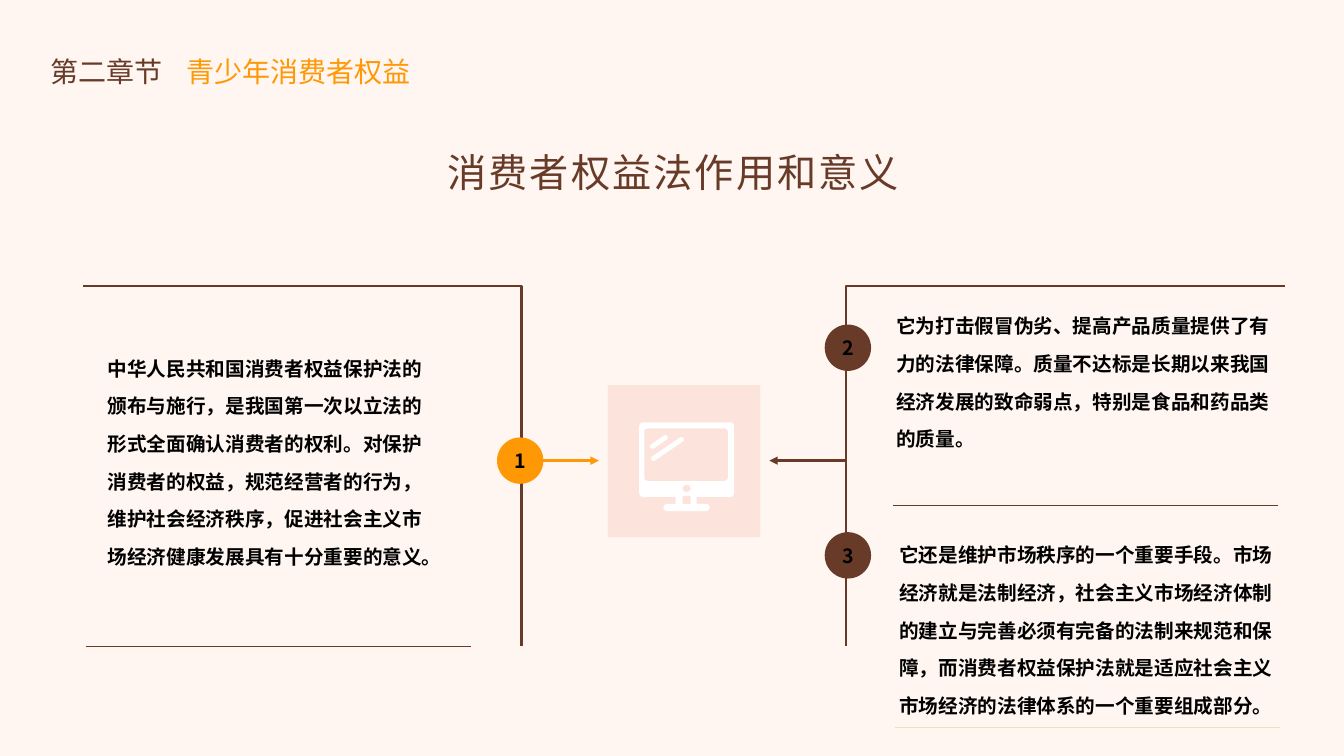
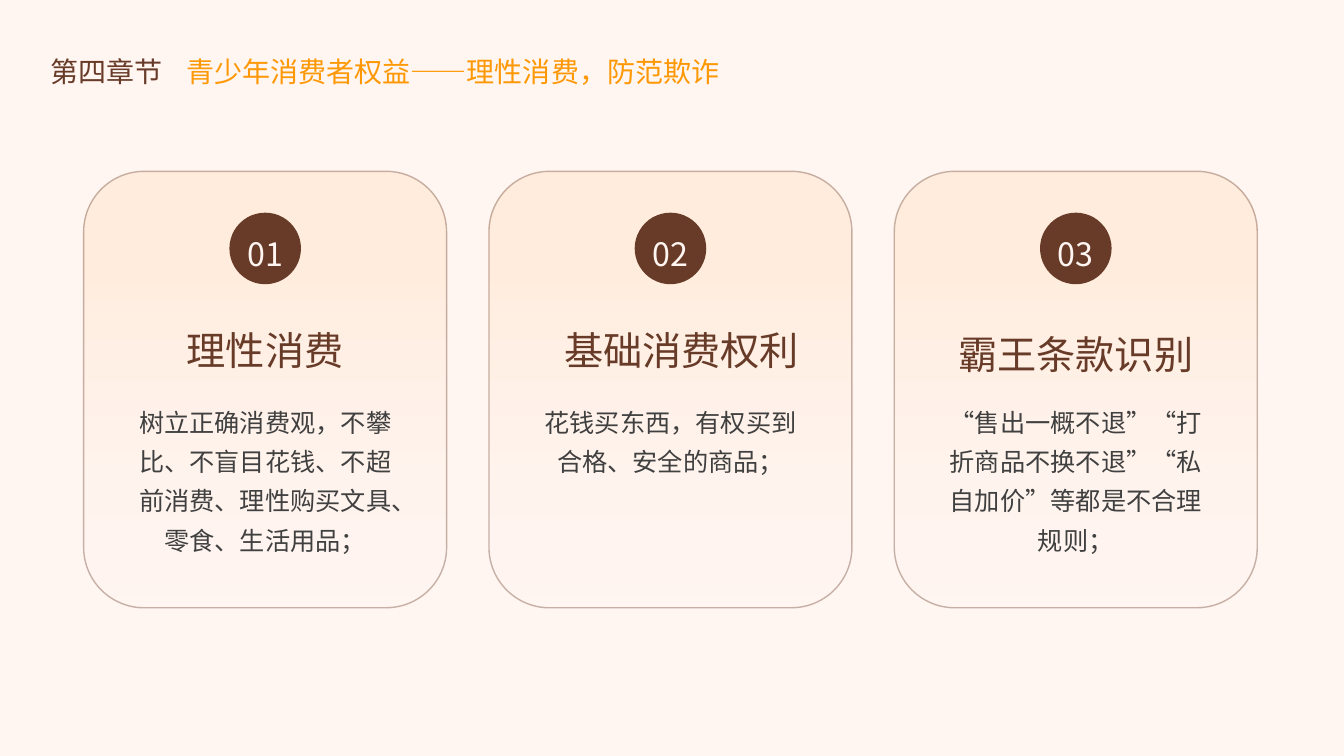
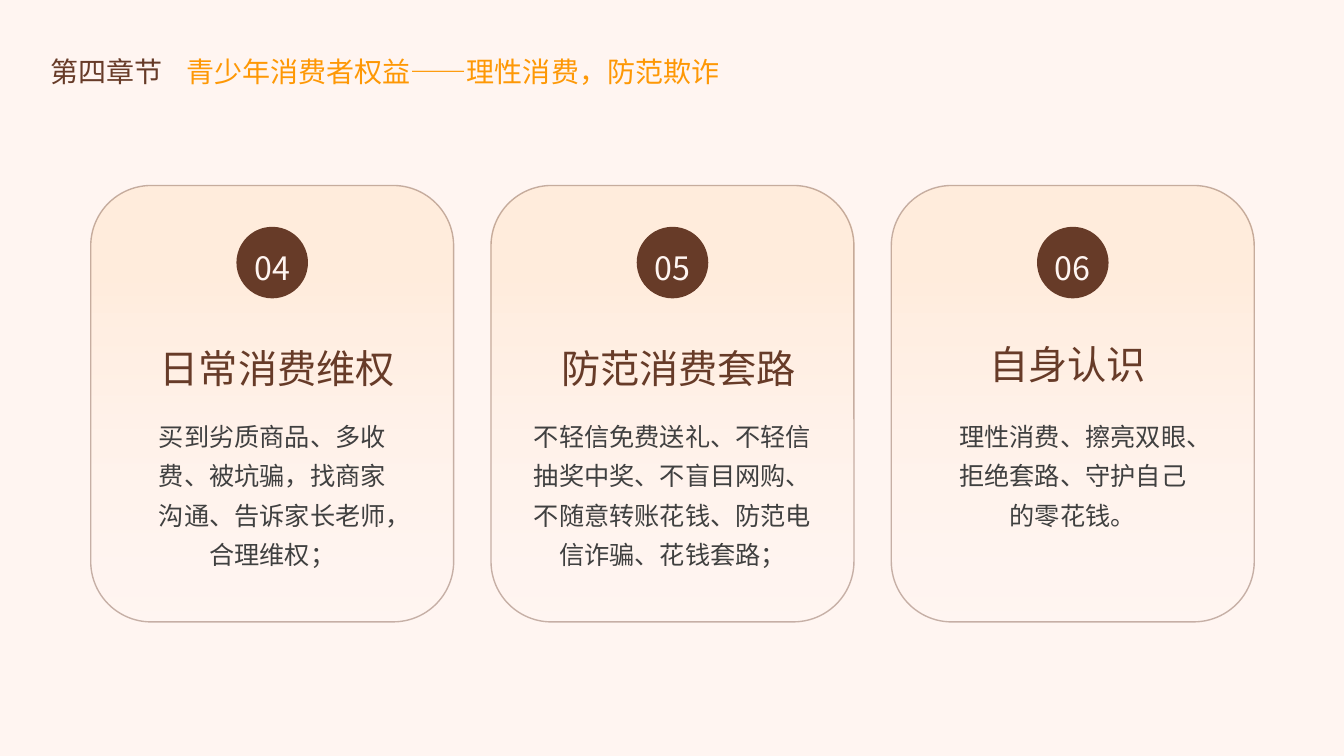
"""Build three slides on the consumer rights of young people."""
from dataclasses import dataclass

from lxml import etree
from pptx import Presentation
from pptx.dml.color import RGBColor
from pptx.enum import shapes, text
from pptx.oxml.ns import qn
from pptx.util import Inches, Pt

FONT = "Noto Sans CJK SC"
BROWN, ORANGE, PINK, CREAM = "673B28", "FE9805", "FCE3DC", "FFF5F1"
WHITE, BLACK, GREY, SAND = "FFFFFF", "000000", "404040", "F0E0B8"
CARD_WIDTH, CARD_HEIGHT = 3.6, 4.33
TITLE_WIDTH, NUMBER_WIDTH, DISC = 2.87, 0.93, 0.71
BADGE = 0.46
Shape = shapes.MSO_SHAPE


@dataclass
class Style:
    size: float
    color: str
    bold: bool = False
    spacing: float = 1.0
    centred: bool = False
    tracking: int = 0


@dataclass
class Card:
    number: str
    title: str
    body: str
    body_width: float = 2.85
    title_shift: float = 0.0
    title_top: float = 1.25


@dataclass
class Point:
    left: float
    top: float
    width: float
    height: float
    body: str


@dataclass
class Badge:
    number: str
    left: float
    top: float
    color: str


@dataclass
class Line:
    start: tuple[float, float]
    end: tuple[float, float]
    color: str
    weight: float = 0.25
    arrow: bool = False
    cap: str = "flat"


@dataclass
class Part:
    kind: Shape
    left: float
    top: float
    width: float
    height: float
    color: str
    corner: float | None = None


CHAPTER = Style(20, BROWN)
TOPIC = Style(20, ORANGE)
HEADLINE = Style(28, BROWN, tracking=150)
POINT = Style(14, BLACK, bold=True, spacing=1.6)
BADGE_NUMBER = Style(14, BLACK, bold=True, centred=True)
CARD_TITLE = Style(28, BROWN, spacing=1.5, centred=True)
CARD_NUMBER = Style(23, CREAM, spacing=1.5, centred=True)
CARD_BODY = Style(18, GREY, spacing=1.3, centred=True)

RULES = [
    Line((5.17, 4.57), (5.94, 4.57), ORANGE, 2, arrow=True),
    Line((8.39, 4.57), (7.63, 4.57), BROWN, 2, arrow=True),
    Line((8.86, 5.01), (12.68, 5.01), BROWN),
    Line((8.88, 7.21), (12.7, 7.21), SAND),
    Line((0.85, 6.41), (4.67, 6.41), BROWN),
]
POINTS = [
    Point(0.97, 3.35, 3.48, 2.55, "中华人民共和国消费者权益保护法的颁布与施行，是我国第一次以立法的形式全面确认消费者的权利。对保护消费者的权益，规范经营者的行为，维护社会经济秩序，促进社会主义市场经济健康发展具有十分重要的意义。"),
    Point(8.79, 2.93, 3.95, 1.51, "它为打击假冒伪劣、提高产品质量提供了有力的法律保障。质量不达标是长期以来我国经济发展的致命弱点，特别是食品和药品类的质量。"),
    Point(8.82, 5.2, 3.95, 0.72, "它还是维护市场秩序的一个重要手段。市场经济就是法制经济，社会主义市场经济体制的建立与完善必须有完备的法制来规范和保障，而消费者权益保护法就是适应社会主义市场经济的法律体系的一个重要组成部分。"),
]
BADGES = [
    Badge("1", 4.93, 4.34, ORANGE),
    Badge("2", 8.18, 3.22, BROWN),
    Badge("3", 8.18, 5.28, BROWN),
]
MONITOR = [
    Part(Shape.RECTANGLE, 6.03, 3.82, 1.51, 1.51, PINK),
    Part(Shape.ROUNDED_RECTANGLE, 6.34, 4.19, 0.94, 0.74, WHITE, 0.05),
    Part(Shape.ROUNDED_RECTANGLE, 6.39, 4.25, 0.83, 0.52, PINK, 0.07),
    Part(Shape.OVAL, 6.77, 4.81, 0.08, 0.07, PINK),
    Part(Shape.RECTANGLE, 6.7, 4.92, 0.21, 0.1, WHITE),
    Part(Shape.ROUNDED_RECTANGLE, 6.77, 4.92, 0.08, 0.08, PINK, 0.15),
    Part(Shape.ROUNDED_RECTANGLE, 6.58, 5.0, 0.46, 0.07, WHITE, 0.5),
]
GLARE = [
    Line((6.48, 4.55), (6.76, 4.36), WHITE, 3.5, cap="rnd"),
    Line((6.47, 4.43), (6.6, 4.34), WHITE, 3.5, cap="rnd"),
]
RIGHTS_CARDS = [
    Card("01", "理性消费", "树立正确消费观，不攀比、不盲目花钱、不超前消费、理性购买文具、零食、生活用品；"),
    Card("02", "基础消费权利", "花钱买东西，有权买到合格、安全的商品；", title_shift=0.11),
    Card("03", "霸王条款识别", "“售出一概不退”“打折商品不换不退”“私自加价”等都是不合理规则；", title_top=1.29),
]
DEFENCE_CARDS = [
    Card("04", "日常消费维权", "买到劣质商品、多收费、被坑骗，找商家沟通、告诉家长老师，合理维权；", 2.69, 0.05, 1.29),
    Card("05", "防范消费套路", "不轻信免费送礼、不轻信抽奖中奖、不盲目网购、不随意转账花钱、防范电信诈骗、花钱套路；", 2.99, 0.06, 1.29),
    Card("06", "自身认识", "理性消费、擦亮双眼、拒绝套路、守护自己的零花钱。", 2.69, -0.05),
]


def rgb(color: str) -> RGBColor:
    return RGBColor.from_string(color)


def write(frame, content: str, style: Style) -> None:
    paragraph = frame.paragraphs[0]
    paragraph.text = content
    paragraph.line_spacing = style.spacing
    paragraph.alignment = text.PP_ALIGN.CENTER if style.centred else text.PP_ALIGN.LEFT
    font = paragraph.font
    font.size, font.bold, font.name = Pt(style.size), style.bold, FONT
    font.color.rgb = rgb(style.color)
    properties = paragraph._p.pPr.find(qn("a:defRPr"))
    etree.SubElement(properties, qn("a:ea"), typeface=FONT)
    if style.tracking:
        properties.set("spc", str(style.tracking))


def add_text(slide, left: float, top: float, width: float, height: float,
             content: str, style: Style) -> None:
    box = slide.shapes.add_textbox(Inches(left), Inches(top), Inches(width), Inches(height))
    box.text_frame.word_wrap = True
    write(box.text_frame, content, style)


def add_part(slide, part: Part):
    shape = slide.shapes.add_shape(part.kind, Inches(part.left), Inches(part.top),
                                   Inches(part.width), Inches(part.height))
    shape.shadow.inherit = False
    shape.fill.solid()
    shape.fill.fore_color.rgb = rgb(part.color)
    shape.line.fill.background()
    if part.corner is not None:
        shape.adjustments[0] = part.corner
    return shape


def add_line(slide, line: Line) -> None:
    connector = slide.shapes.add_connector(
        shapes.MSO_CONNECTOR.STRAIGHT, *(Inches(value) for value in line.start + line.end))
    connector.line.color.rgb = rgb(line.color)
    connector.line.width = Pt(line.weight)
    properties = connector._element.spPr
    outline = properties.find(qn("a:ln"))
    outline.set("cap", line.cap)
    if line.arrow:
        etree.SubElement(outline, qn("a:tailEnd"), type="triangle")
    etree.SubElement(properties, qn("a:effectLst"))


def add_bracket(slide, inner: float, outer: float, top: float = 2.84, bottom: float = 6.41) -> None:
    builder = slide.shapes.build_freeform(Inches(inner), Inches(bottom))
    builder.add_line_segments(
        [(Inches(inner), Inches(top)), (Inches(outer), Inches(top))], close=False)
    bracket = builder.convert_to_shape()
    bracket.shadow.inherit = False
    bracket.fill.background()
    bracket.line.color.rgb = rgb(BROWN)
    bracket.line.width = Pt(1.75)


def add_badge(slide, badge: Badge) -> None:
    disc = add_part(slide, Part(Shape.ROUNDED_RECTANGLE, badge.left, badge.top,
                                BADGE, BADGE, badge.color, 0.5))
    frame = disc.text_frame
    frame.margin_left = frame.margin_right = frame.margin_top = frame.margin_bottom = 0
    frame.word_wrap = False
    frame.vertical_anchor = text.MSO_ANCHOR.MIDDLE
    write(frame, badge.number, BADGE_NUMBER)


def add_card(slide, card: Card, left: float, top: float) -> None:
    panel = add_part(slide, Part(Shape.ROUNDED_RECTANGLE, left, top,
                                 CARD_WIDTH, CARD_HEIGHT, PINK))
    panel.fill.gradient()
    panel.fill.gradient_angle = 270
    for stop, position, color in zip(panel.fill.gradient_stops, (0.22, 1), (ORANGE, PINK)):
        stop.position = position
        stop.color.rgb = rgb(color)
    panel.line.color.rgb = rgb(BROWN)
    panel.line.width = Pt(1)
    colors = list(panel._element.spPr.iter(qn("a:srgbClr")))
    for color, opacity in zip(colors, (8, 0, 37)):
        etree.SubElement(color, qn("a:alpha"), val=str(opacity * 1000))

    centre = left + CARD_WIDTH / 2
    add_part(slide, Part(Shape.OVAL, centre - DISC / 2, top + 0.41, DISC, DISC, BROWN))
    add_text(slide, centre - NUMBER_WIDTH / 2, top + 0.38, NUMBER_WIDTH, 0.56,
             card.number, CARD_NUMBER)
    add_text(slide, centre + card.title_shift - TITLE_WIDTH / 2, top + card.title_top,
             TITLE_WIDTH, 0.81, card.title, CARD_TITLE)
    add_text(slide, centre - card.body_width / 2, top + 2.2, card.body_width, 2.11,
             card.body, CARD_BODY)


def add_slide(deck, chapter: str, topic: str):
    slide = deck.slides.add_slide(deck.slide_layouts[6])
    slide.background.fill.solid()
    slide.background.fill.fore_color.rgb = rgb(CREAM)
    add_text(slide, 0.4, 0.49, 1.37, 0.44, chapter, CHAPTER)
    add_text(slide, 1.75, 0.49, 7.06, 0.44, topic, TOPIC)
    return slide


def build_meaning(deck) -> None:
    slide = add_slide(deck, "第二章节", "青少年消费者权益")
    add_text(slide, 4.34, 1.42, 4.88, 0.57, "消费者权益法作用和意义", HEADLINE)
    add_bracket(slide, 5.17, 0.82)
    add_bracket(slide, 8.39, 12.75)
    for part in MONITOR:
        add_part(slide, part)
    for line in RULES + GLARE:
        add_line(slide, line)
    for point in POINTS:
        add_text(slide, point.left, point.top, point.width, point.height, point.body, POINT)
    for badge in BADGES:
        add_badge(slide, badge)


def build_cards(deck, cards: list[Card], left: float, top: float, pitch: float) -> None:
    slide = add_slide(deck, "第四章节", "青少年消费者权益——理性消费，防范欺诈")
    for index, card in enumerate(cards):
        add_card(slide, card, left + index * pitch, top)


def main() -> None:
    deck = Presentation()
    deck.slide_width, deck.slide_height = Inches(13.33), Inches(7.5)
    build_meaning(deck)
    build_cards(deck, RIGHTS_CARDS, left=0.83, top=1.7, pitch=4.02)
    build_cards(deck, DEFENCE_CARDS, left=0.9, top=1.84, pitch=3.97)
    deck.save("out.pptx")


if __name__ == "__main__":
    main()
